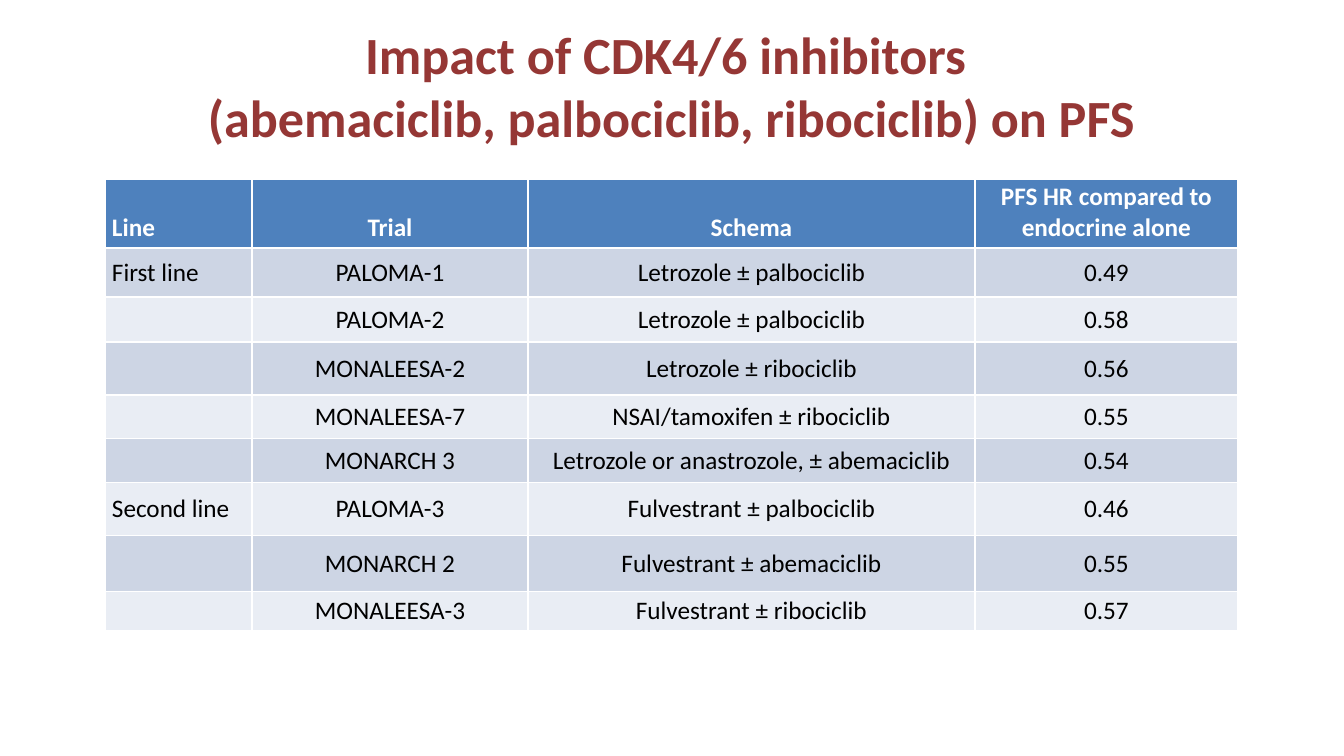
from pptx import Presentation, util as u
from pptx.dml.color import RGBColor
from pptx.enum import text as t
from pptx.oxml import parse_xml
from pptx.oxml.ns import nsdecls

# Content
TITLE = "Impact of CDK4/6 inhibitors \n(abemaciclib, palbociclib, ribociclib) on PFS"
ROWS = [
    ("Line", "Trial", "Schema", "PFS HR compared to endocrine alone"),
    ("First line", "PALOMA-1", "Letrozole ± palbociclib", "0.49"),
    ("", "PALOMA-2", "Letrozole ± palbociclib", "0.58"),
    ("", "MONALEESA-2", "Letrozole ± ribociclib", "0.56"),
    ("", "MONALEESA-7", "NSAI/tamoxifen ± ribociclib", "0.55"),
    ("", "MONARCH 3", "Letrozole or anastrozole, ± abemaciclib", "0.54"),
    ("Second line", "PALOMA-3", "Fulvestrant ± palbociclib", "0.46"),
    ("", "MONARCH 2", "Fulvestrant ± abemaciclib", "0.55"),
    ("", "MONALEESA-3", "Fulvestrant ± ribociclib", "0.57"),
]

# Layout in px
WIDTHS = [147, 276, 447, 263]
HEIGHTS = [69, 49, 45, 53, 44, 44, 53, 56, 39]
LEFT, TOP = 105, 179
HEAD, BANDS = "4E81BD", ("E9EDF4", "CDD5E4")


def px(n):
    return u.Emu(round(n * 914400 / 100.8))


def rgb(code):
    return RGBColor.from_string(code)


def write(frame, words, size=18, color="000000", bold=False, center=True):
    frame.word_wrap = True
    para = frame.paragraphs[0]
    para.text = words
    para.alignment = t.PP_ALIGN.CENTER if center else t.PP_ALIGN.LEFT
    for run in para.runs:
        font = run.font
        font.name, font.size, font.bold = "Calibri", u.Pt(size), bold
        font.color.rgb = rgb(color)


def border(cell, color="FFFFFF", width=1):
    props = cell._tc.get_or_add_tcPr()
    for n, side in enumerate(("lnL", "lnR", "lnT", "lnB")):
        props.insert(n, parse_xml(
            f'<a:{side} {nsdecls("a")} w="{u.Pt(width)}"><a:solidFill>'
            f'<a:srgbClr val="{color}"/></a:solidFill></a:{side}>'))


deck = Presentation()
deck.slide_width, deck.slide_height = px(1344), px(756)
slide = deck.slides.add_slide(deck.slide_layouts[6])

# Trial table
grid = slide.shapes.add_table(
    len(ROWS), len(WIDTHS), px(LEFT), px(TOP), px(sum(WIDTHS)), px(sum(HEIGHTS))).table
for col, wide in zip(grid.columns, WIDTHS):
    col.width = px(wide)
for row, high in zip(grid.rows, HEIGHTS):
    row.height = px(high)

for r, line in enumerate(ROWS):
    top = r == 0
    for c, words in enumerate(line):
        cell = grid.cell(r, c)
        cell.margin_left = cell.margin_right = px(7)
        cell.margin_top, cell.margin_bottom = 0, px(5 if top else 0)
        cell.vertical_anchor = t.MSO_ANCHOR.BOTTOM if top else t.MSO_ANCHOR.MIDDLE
        cell.fill.solid()
        cell.fill.fore_color.rgb = rgb(HEAD if top else BANDS[r % 2])
        border(cell)
        write(cell.text_frame, words, color="FFFFFF" if top else "000000",
              bold=top, center=c > 0)

# Title
box = slide.shapes.add_textbox(px(67), px(22), px(1210), px(126)).text_frame
box.vertical_anchor = t.MSO_ANCHOR.MIDDLE
# A vertical tab is a line break inside one paragraph
write(box, TITLE.replace("\n", "\v"), size=37.3, color="953735", bold=True)

deck.save("out.pptx")
